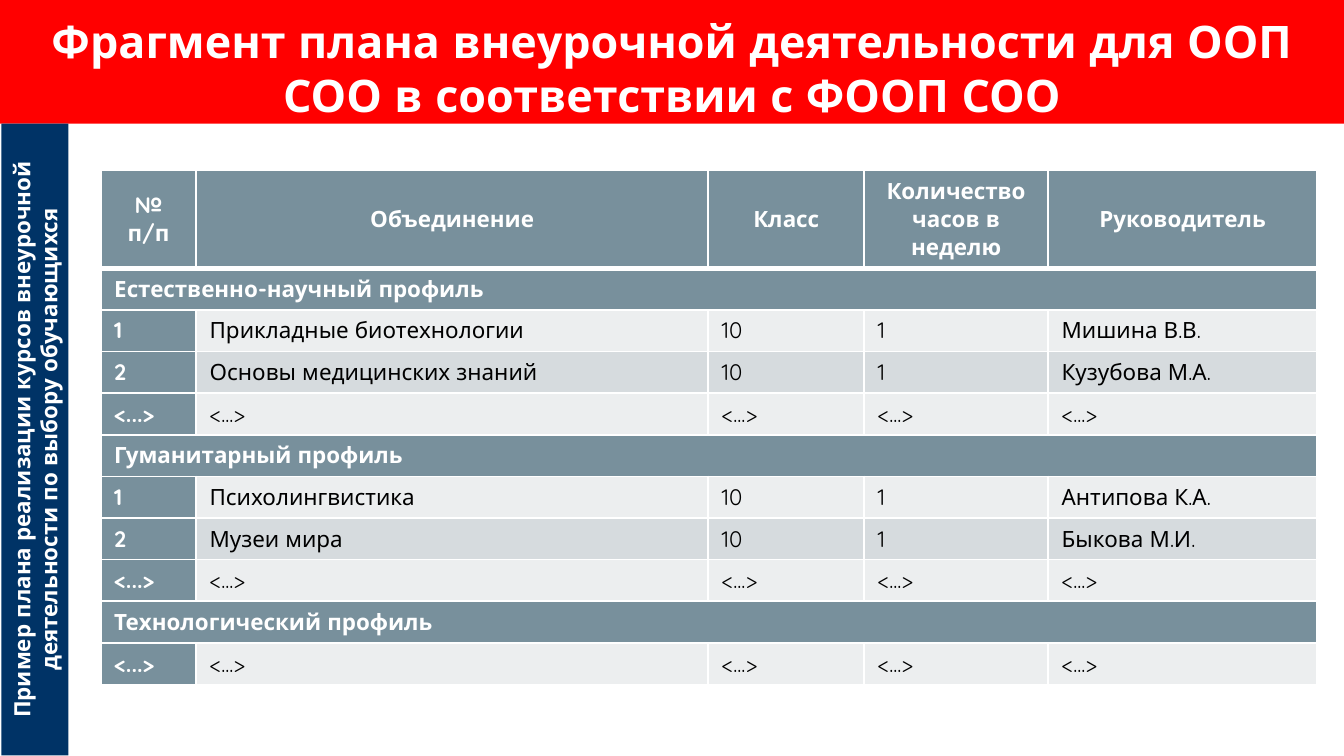
"""Build a slide with a fragment of an extracurricular activity plan."""
from dataclasses import dataclass

from lxml import etree
from pptx import Presentation
from pptx import util as u
from pptx.dml.color import RGBColor
from pptx.enum import shapes, text
from pptx.oxml import ns


@dataclass(frozen=True)
class Theme:
    """Colours, font, type sizes and line widths of the slide."""
    font: str = "Quicksand"
    title_size: int = 24
    body_size: int = 12
    white: str = "FFFFFF"
    black: str = "000000"
    red: str = "FF0000"
    navy: str = "003366"
    slate: str = "78909C"
    bands: tuple[str, str] = ("ECEEEF", "D6DBDE")
    thin: int = 1
    thick: int = 3


@dataclass(frozen=True)
class Banner:
    """A filled rectangle with centred bold text."""
    label: str
    left: float
    top: float
    width: float
    height: float
    fill: str
    size: int
    anchor: text.MSO_ANCHOR
    inset: float
    rotation: int = 0


@dataclass(frozen=True)
class Profile:
    """A study profile and its activity rows."""
    name: str
    rows: tuple[tuple[str, ...], ...]


THEME = Theme()
MORE = ("<...>",) * 5
BANNERS = (
    Banner("Фрагмент плана внеурочной деятельности для ООП СОО в соответствии с ФООП СОО",
           0, 0, 10, 0.92, THEME.red, THEME.title_size, text.MSO_ANCHOR.TOP, 0.1),
    Banner("Пример плана реализации курсов внеурочной деятельности по выбору обучающихся",
           -2.09, 3.02, 4.7, 0.5, THEME.navy, THEME.body_size, text.MSO_ANCHOR.MIDDLE, 0.05, 270),
)
HEADER = ("№ п/п", "Объединение", "Класс", "Количество часов в неделю", "Руководитель")
WIDTHS = (0.71, 3.81, 1.16, 1.37, 2.0)
HEADER_HEIGHT, ROW_HEIGHT = 0.71, 0.31
PROFILES = (
    Profile("Естественно-научный профиль", (
        ("1", "Прикладные биотехнологии", "10", "1", "Мишина В.В."),
        ("2", "Основы медицинских знаний", "10", "1", "Кузубова М.А."),
        MORE)),
    Profile("Гуманитарный профиль", (
        ("1", "Психолингвистика", "10", "1", "Антипова К.А."),
        ("2", "Музеи мира", "10", "1", "Быкова М.И."),
        MORE)),
    Profile("Технологический профиль", (MORE,)),
)


def write(tf, label: str, size: int, color: str, bold: bool, align: text.PP_ALIGN) -> None:
    """Put one styled paragraph into a text frame."""
    p = tf.paragraphs[0]
    p.add_run().text = label
    p.alignment = align
    p.font.name, p.font.size, p.font.bold = THEME.font, u.Pt(size), bold
    p.font.color.rgb = RGBColor.from_string(color)


def add_banner(s, b: Banner) -> None:
    """Draw a banner."""
    sp = s.shapes.add_shape(shapes.MSO_SHAPE.RECTANGLE, u.Inches(b.left), u.Inches(b.top),
                            u.Inches(b.width), u.Inches(b.height))
    sp.rotation = b.rotation
    sp.shadow.inherit = False
    sp.fill.solid()
    sp.fill.fore_color.rgb = RGBColor.from_string(b.fill)
    sp.line.fill.background()
    tf = sp.text_frame
    tf.word_wrap = True
    tf.vertical_anchor = b.anchor
    tf.margin_left = tf.margin_right = u.Inches(0.1)
    tf.margin_top = tf.margin_bottom = u.Inches(b.inset)
    write(tf, b.label, b.size, THEME.white, True, text.PP_ALIGN.CENTER)


def set_borders(cell, top: int, bottom: int) -> None:
    """Give a cell white borders, with top and bottom widths in points."""
    tc_pr = cell._tc.get_or_add_tcPr()
    sides = {"L": THEME.thin, "R": THEME.thin, "T": top, "B": bottom}
    for i, (side, width) in enumerate(sides.items()):
        line = etree.Element(ns.qn(f"a:ln{side}"), w=str(u.Pt(width)))
        fill = etree.SubElement(line, ns.qn("a:solidFill"))
        etree.SubElement(fill, ns.qn("a:srgbClr"), val=THEME.white)
        tc_pr.insert(i, line)


def fill_cell(cell, label: str, fill: str, heading: bool,
              align: text.PP_ALIGN = text.PP_ALIGN.LEFT) -> None:
    """Fill a table cell and write its text."""
    cell.fill.solid()
    cell.fill.fore_color.rgb = RGBColor.from_string(fill)
    color = THEME.white if heading else THEME.black
    write(cell.text_frame, label, THEME.body_size, color, heading, align)


def add_plan(s) -> None:
    """Draw the plan table, one block of rows per profile."""
    count = 1 + sum(1 + len(profile.rows) for profile in PROFILES)
    height = HEADER_HEIGHT + (count - 1) * ROW_HEIGHT
    table = s.shapes.add_table(count, len(WIDTHS), u.Inches(0.75), u.Inches(1.27),
                               u.Inches(sum(WIDTHS)), u.Inches(height)).table
    table.first_col = True
    for column, width in zip(table.columns, WIDTHS):
        column.width = u.Inches(width)
    for i, row in enumerate(table.rows):
        row.height = u.Inches(ROW_HEIGHT if i else HEADER_HEIGHT)
        for cell in row.cells:
            set_borders(cell, THEME.thick if i == 1 else THEME.thin,
                        THEME.thin if i else THEME.thick)
    for c, label in enumerate(HEADER):
        cell = table.cell(0, c)
        cell.vertical_anchor = text.MSO_ANCHOR.MIDDLE
        fill_cell(cell, label, THEME.slate, True, text.PP_ALIGN.CENTER)
    r = 1
    for profile in PROFILES:
        table.cell(r, 0).merge(table.cell(r, len(WIDTHS) - 1))
        fill_cell(table.cell(r, 0), profile.name, THEME.slate, True)
        for i, labels in enumerate(profile.rows):
            for c, label in enumerate(labels):
                fill = THEME.slate if c == 0 else THEME.bands[i % 2]
                fill_cell(table.cell(r + 1 + i, c), label, fill, c == 0)
        r += 1 + len(profile.rows)


def main() -> None:
    """Build and save the presentation."""
    prs = Presentation()
    prs.slide_width = u.Inches(10)
    prs.slide_height = prs.slide_width * 9 // 16
    s = prs.slides.add_slide(prs.slide_layouts[6])
    title, sidebar = BANNERS
    add_banner(s, title)
    add_plan(s)
    add_banner(s, sidebar)
    prs.save("out.pptx")


if __name__ == "__main__":
    main()
